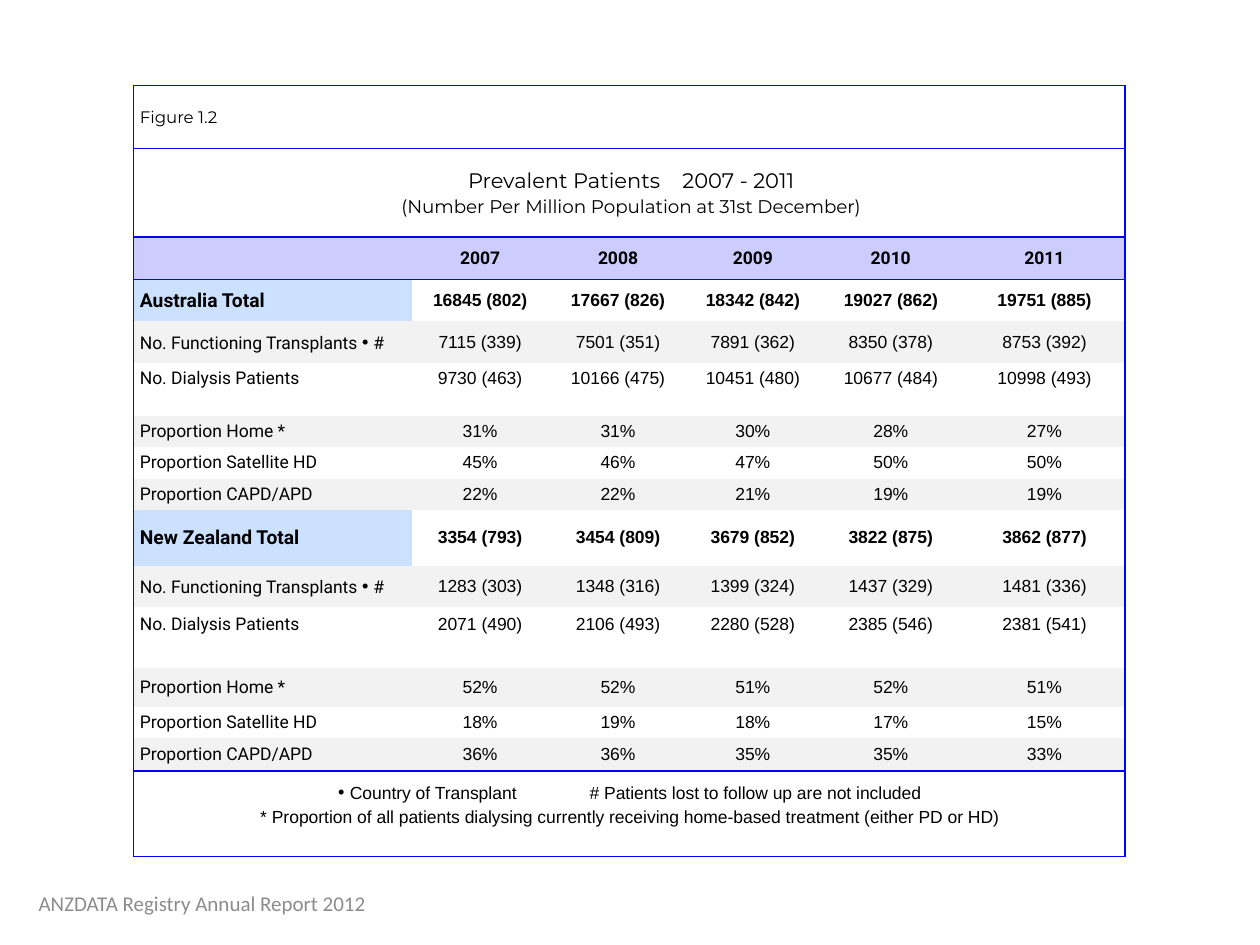
from dataclasses import dataclass
from typing import NamedTuple, Optional

from lxml import etree
from pptx import Presentation
from pptx import util as u
from pptx.dml.color import RGBColor
from pptx.enum import text
from pptx.oxml import ns


@dataclass(frozen=True)
class Theme:
    rule: str = "0000FF"
    header: str = "CCCCFF"
    country: str = "CCE1FF"
    band: str = "F2F2F2"
    ink: str = "000000"
    source: str = "8C8C8C"
    heading_font: str = "Montserrat"
    label_font: str = "Roboto"
    figure_font: str = "Arial"
    bullet_font: str = "Times New Roman"
    source_font: str = "Calibri"
    figure_size: float = 9.5
    title_size: float = 12
    subtitle_size: float = 10.5
    total_size: float = 11
    body_size: float = 10
    bullet_size: float = 12
    spacer_size: float = 4
    rule_width: float = 1


class Run(NamedTuple):
    words: str
    font: str
    size: float
    bold: bool = False
    color: str = "000000"
    gap: float = 0  # extra points after each character


class Row(NamedTuple):
    height: float
    label: str = ""
    values: str = ""  # one per year, split at "|"
    label_fill: Optional[str] = None
    value_fill: Optional[str] = None
    bold: bool = False


T = Theme()
MARGIN = 0.02
LABEL_INDENT = 0.05
COLUMNS = (2.21, 1.08, 1.11, 1.03, 1.16, 1.28)
NO_STYLE = "{2D5ABB26-0587-4C30-8999-92F81FD0307C}"
TRANSPLANTS = "No. Functioning Transplants • #"
DIALYSIS = "No. Dialysis Patients"
HOME, SATELLITE, CAPD = ("Proportion Home *", "Proportion Satellite HD",
                         "Proportion CAPD/APD")


def banded(height: float, label: str, values: str) -> Row:
    return Row(height, label, values, T.band, T.band)


def total(height: float, label: str, values: str) -> Row:
    return Row(height, label, values, T.country, None, True)


ROWS = (
    Row(0.5),
    Row(0.7),
    Row(0.34, "", "2007|2008|2009|2010|2011", T.header, T.header, True),
    total(0.33, "Australia Total",
          "16845 (802)|17667 (826)|18342 (842)|19027 (862)|19751 (885)"),
    banded(0.33, TRANSPLANTS, "7115 (339)|7501 (351)|7891 (362)|8350 (378)|8753 (392)"),
    Row(0.25, DIALYSIS, "9730 (463)|10166 (475)|10451 (480)|10677 (484)|10998 (493)"),
    Row(0.17),
    banded(0.25, HOME, "31%|31%|30%|28%|27%"),
    Row(0.25, SATELLITE, "45%|46%|47%|50%|50%"),
    banded(0.25, CAPD, "22%|22%|21%|19%|19%"),
    total(0.44, "New Zealand Total",
          "3354 (793)|3454 (809)|3679 (852)|3822 (875)|3862 (877)"),
    banded(0.33, TRANSPLANTS, "1283 (303)|1348 (316)|1399 (324)|1437 (329)|1481 (336)"),
    Row(0.28, DIALYSIS, "2071 (490)|2106 (493)|2280 (528)|2385 (546)|2381 (541)"),
    Row(0.2),
    banded(0.31, HOME, "52%|52%|51%|52%|51%"),
    Row(0.25, SATELLITE, "18%|19%|18%|17%|15%"),
    banded(0.26, CAPD, "36%|36%|35%|35%|33%"),
    Row(0.68),
)
FIGURE, TITLE, HEADER, NOTES = 0, 1, 2, len(ROWS) - 1
RULED_ABOVE = {FIGURE, TITLE, HEADER, HEADER + 1, NOTES, NOTES + 1}
CENTER, LEFT = text.PP_ALIGN.CENTER, text.PP_ALIGN.LEFT


def write(paragraph, runs: list[Run], align=LEFT, before: float = 0) -> None:
    paragraph.alignment = align
    if before:
        paragraph.space_before = u.Pt(before)
    for item in runs:
        run = paragraph.add_run()
        run.text = item.words
        look = {"name": item.font, "size": u.Pt(item.size), "bold": item.bold}
        for key, value in look.items():
            setattr(run.font, key, value)
        run.font.color.rgb = RGBColor.from_string(item.color)
        if item.gap:
            run.font._element.set("spc", str(int(item.gap * 100)))


def set_borders(cell, sides: str) -> None:
    """Rule the named sides (of L, R, T, B) and clear the others."""
    properties = cell._tc.get_or_add_tcPr()
    for side in "LRTB":
        line = etree.SubElement(properties, ns.qn(f"a:ln{side}"),
                                w=str(u.Pt(T.rule_width)))
        if side in sides:
            fill = etree.SubElement(line, ns.qn("a:solidFill"))
            etree.SubElement(fill, ns.qn("a:srgbClr"), val=T.rule)
        else:
            etree.SubElement(line, ns.qn("a:noFill"))


def style_cell(cell, sides: str, fill: Optional[str], left: float = MARGIN) -> None:
    look = {"margin_left": u.Inches(left), "margin_right": u.Inches(MARGIN),
            "margin_top": u.Inches(MARGIN), "margin_bottom": u.Inches(MARGIN),
            "vertical_anchor": text.MSO_ANCHOR.MIDDLE}
    for key, value in look.items():
        setattr(cell, key, value)
    set_borders(cell, sides)
    if fill:
        cell.fill.solid()
        cell.fill.fore_color.rgb = RGBColor.from_string(fill)
    else:
        cell.fill.background()


def label_runs(row: Row) -> list[Run]:
    size = T.total_size if row.bold else T.body_size
    before, bullet, after = row.label.partition("•")
    runs = [Run(before, T.label_font, size, row.bold),
            Run(bullet, T.bullet_font, T.bullet_size),
            Run(after, T.label_font, size)]
    return [run for run in runs if run.words]


def fill_row(table, index: int, row: Row) -> None:
    wide = index in (FIGURE, TITLE, NOTES)
    last = len(COLUMNS) - 1
    font = T.label_font if index == HEADER else T.figure_font
    words = [row.label, *(row.values.split("|") if row.values else [""] * last)]
    for column, content in enumerate(words):
        cell = table.cell(index, column)
        sides = ("L" * (column == 0) + "R" * (wide or column == last)
                 + "T" * (index in RULED_ABOVE) + "B" * (index + 1 in RULED_ABOVE))
        style_cell(cell, sides, row.value_fill if column else row.label_fill,
                   MARGIN if column else LABEL_INDENT)
        paragraph = cell.text_frame.paragraphs[0]
        if not content:
            if not (wide and column == 0):
                etree.SubElement(paragraph._p, ns.qn("a:endParaRPr"),
                                 sz=str(int(T.spacer_size * 100)))
        elif column:
            write(paragraph, [Run(content, font, T.body_size, row.bold)], CENTER)
        else:
            write(paragraph, label_runs(row))
    if wide:
        table.cell(index, 0).merge(table.cell(index, last))


def write_headings(table) -> None:
    figure = table.cell(FIGURE, 0).text_frame
    write(figure.paragraphs[0], [Run("Figure 1.2", T.heading_font, T.figure_size)])
    title = table.cell(TITLE, 0).text_frame
    face = (T.heading_font, T.title_size)
    write(title.paragraphs[0], [Run("Prevalent Patients", *face),
                                Run(" ", *face, gap=9.5),
                                Run("2007 - 2011", *face)], CENTER)
    write(title.add_paragraph(),
          [Run("(Number Per Million Population at 31st December)",
               T.heading_font, T.subtitle_size)], CENTER, before=1)


def write_notes(table) -> None:
    cell = table.cell(NOTES, 0)
    cell.vertical_anchor = text.MSO_ANCHOR.TOP
    cell.margin_left = u.Inches(MARGIN)
    cell.margin_top = u.Inches(0.08)
    face = (T.figure_font, T.body_size)
    write(cell.text_frame.paragraphs[0],
          [Run("•", T.bullet_font, T.bullet_size), Run(" Country of Transplant", *face),
           Run(" ", *face, gap=39),
           Run("# Patients lost to follow up are not included", *face)], CENTER)
    write(cell.text_frame.add_paragraph(),
          [Run("* Proportion of all patients dialysing currently receiving "
               "home-based treatment (either PD or HD)", *face)], CENTER, before=2)


def add_patients_table(slide) -> None:
    table = slide.shapes.add_table(
        len(ROWS), len(COLUMNS), u.Inches(1.06), u.Inches(0.68),
        u.Inches(sum(COLUMNS)), u.Inches(sum(row.height for row in ROWS))).table
    table.first_row = table.horz_banding = False
    table._tbl.tblPr.find(ns.qn("a:tableStyleId")).text = NO_STYLE
    for column, width in zip(table.columns, COLUMNS):
        column.width = u.Inches(width)
    for index, row in enumerate(ROWS):
        table.rows[index].height = u.Inches(row.height)
        fill_row(table, index, row)
    write_headings(table)
    write_notes(table)


def add_source(slide) -> None:
    frame = slide.shapes.add_textbox(u.Inches(0.02), u.Inches(6.97),
                                     u.Inches(3.17), u.Inches(0.4)).text_frame
    frame.word_wrap = True
    frame.vertical_anchor = text.MSO_ANCHOR.MIDDLE
    write(frame.paragraphs[0], [Run("ANZDATA Registry Annual Report 2012",
                                    T.source_font, 12, color=T.source)], CENTER)


def main() -> None:
    deck = Presentation()
    deck.slide_width, deck.slide_height = u.Inches(10), u.Inches(7.5)
    slide = deck.slides.add_slide(deck.slide_layouts[6])
    add_patients_table(slide)
    add_source(slide)
    deck.save("out.pptx")


if __name__ == "__main__":
    main()
